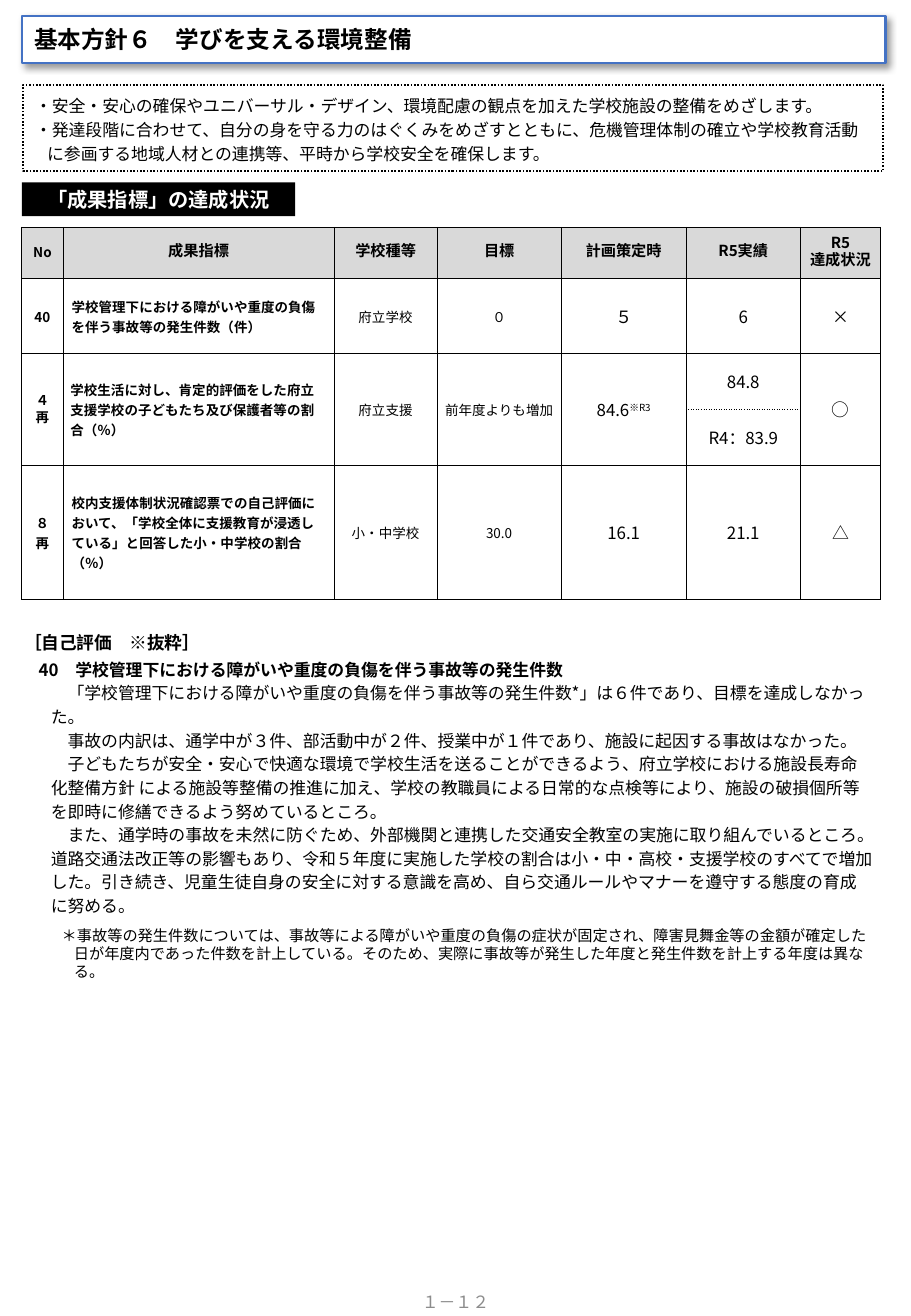
from dataclasses import dataclass

import lxml.etree
import pptx
import pptx.dml.color
import pptx.enum.shapes
import pptx.enum.text
import pptx.oxml.ns
import pptx.util
from pptx.util import Inches

SANS = "Noto Sans CJK JP"
SERIF = "TeX Gyre Schola"
BLACK, WHITE, BLUE, GRAY, PALE = "000000", "FFFFFF", "4472C4", "8C8C8C", "D9D9D9"
LEFT = pptx.enum.text.PP_ALIGN.LEFT
CENTER = pptx.enum.text.PP_ALIGN.CENTER
JUSTIFY = pptx.enum.text.PP_ALIGN.JUSTIFY
TOP = pptx.enum.text.MSO_ANCHOR.TOP
MIDDLE = pptx.enum.text.MSO_ANCHOR.MIDDLE


@dataclass
class Para:
    text: str
    size: float = 10
    bold: bool = False
    align: int = LEFT
    lead: float = 0
    left: float = 0
    hang: float = 0
    before: float = 0
    hue: str = BLACK
    face: str = SANS


@dataclass
class Row:
    """One printed row; leads are line pitches for number, text and value columns."""
    index: int
    leads: tuple[int, int, int]
    texts: list[str]
    span: int = 1


WIDTHS = [0.34, 2.23, 0.85, 1.02, 1.03, 0.94, 0.66]
HEIGHTS = [0.42, 0.62, 0.46, 0.46, 1.1]
RESULT = 5
ROWS = [
    Row(0, (10, 10, 10), ["No", "成果指標", "学校種等", "目標", "計画策定時", "R5実績", "R5\n達成状況"]),
    Row(1, (12, 12, 15), ["40", "学校管理下における障がいや重度の負傷を伴う事故等の発生件数（件）",
                          "府立学校", "０", "５", "6", "×"]),
    Row(2, (10, 12, 14), ["４\n再", "学校生活に対し、肯定的評価をした府立支援学校の子どもたち及び保護者等の割合（％）",
                          "府立支援", "前年度よりも増加", "84.6", "84.8", "○"], span=2),
    Row(4, (12, 12, 15), ["８\n再", "校内支援体制状況確認票での自己評価において、「学校全体に支援教育が浸透している」"
                          "と回答した小・中学校の割合（％）", "小・中学校", "30.0", "16.1", "21.1", "△"]),
]

AIMS = [
    Para("・安全・安心の確保やユニバーサル・デザイン、環境配慮の観点を加えた学校施設の整備をめざします。", lead=14),
    Para("・発達段階に合わせて、自分の身を守る力のはぐくみをめざすとともに、危機管理体制の確立や学校教育活動"
         "に参画する地域人材との連携等、平時から学校安全を確保します。", lead=14, left=0.1, hang=-0.1),
]
BODY = [
    "　「学校管理下における障がいや重度の負傷を伴う事故等の発生件数*」は６件であり、目標を達成しなかった。",
    "　事故の内訳は、通学中が３件、部活動中が２件、授業中が１件であり、施設に起因する事故はなかった。",
    "　子どもたちが安全・安心で快適な環境で学校生活を送ることができるよう、府立学校における施設長寿命化整備方針 "
    "による施設等整備の推進に加え、学校の教職員による日常的な点検等により、施設の破損個所等を即時に修繕できるよう"
    "努めているところ。",
    "　また、通学時の事故を未然に防ぐため、外部機関と連携した交通安全教室の実施に取り組んでいるところ。"
    "道路交通法改正等の影響もあり、令和５年度に実施した学校の割合は小・中・高校・支援学校のすべてで増加した。"
    "引き続き、児童生徒自身の安全に対する意識を高め、自ら交通ルールやマナーを遵守する態度の育成に努める。",
]
REVIEW = [
    Para("40　学校管理下における障がいや重度の負傷を伴う事故等の発生件数", bold=True, lead=14),
    *[Para(text, lead=14, left=0.1) for text in BODY],
    Para("＊事故等の発生件数については、事故等による障がいや重度の負傷の症状が固定され、障害見舞金等の金額が確定した"
         "日が年度内であった件数を計上している。そのため、実際に事故等が発生した年度と発生件数を計上する年度は異なる。",
         size=9, lead=10.8, left=0.29, hang=-0.1, before=6),
]


def color(code: str) -> pptx.dml.color.RGBColor:
    return pptx.dml.color.RGBColor.from_string(code)


def node(parent, tag: str, **attrs: str):
    """Append a DrawingML element."""
    return lxml.etree.SubElement(parent, pptx.oxml.ns.qn("a:" + tag), attrs)


def style_run(run, spec: Para) -> None:
    font = run.font
    font.size = pptx.util.Pt(spec.size)
    font.bold = spec.bold
    font.color.rgb = color(spec.hue)
    font.name = spec.face
    node(run._r.get_or_add_rPr(), "ea", typeface=spec.face)


def style_para(para, spec: Para) -> None:
    para.alignment = spec.align
    para.line_spacing = pptx.util.Pt(spec.lead) if spec.lead else 1.0
    para.space_before = pptx.util.Pt(spec.before)
    props = para._p.get_or_add_pPr()
    props.set("marL", str(Inches(spec.left)))
    props.set("indent", str(Inches(spec.hang)))
    for run in para.runs:
        style_run(run, spec)


def write(shape, specs: list[Para], anchor=MIDDLE, wrap: bool = True) -> None:
    frame = shape.text_frame
    frame.word_wrap = wrap
    frame.auto_size = pptx.enum.text.MSO_AUTO_SIZE.NONE
    frame.vertical_anchor = anchor
    frame.text = "\n".join(spec.text for spec in specs)
    for para, spec in zip(frame.paragraphs, specs):
        style_para(para, spec)


def place(shape, left: float, top: float, width: float, height: float) -> None:
    shape.left, shape.top = Inches(left), Inches(top)
    shape.width, shape.height = Inches(width), Inches(height)


def add_box(slide, area: tuple[float, ...]):
    """Add a rectangle with no shadow, fill or line."""
    kind = pptx.enum.shapes.MSO_SHAPE.RECTANGLE
    shape = slide.shapes.add_shape(kind, *map(Inches, area))
    shape.shadow.inherit = False
    shape.fill.background()
    shape.line.fill.background()
    return shape


def add_text(slide, area: tuple[float, ...], specs: list[Para], anchor=TOP) -> None:
    write(slide.shapes.add_textbox(*map(Inches, area)), specs, anchor)


def add_title(slide) -> None:
    title = slide.shapes.title
    place(title, 0.18, 0.13, 7.11, 0.39)
    title.fill.solid()
    title.fill.fore_color.rgb = color(WHITE)
    title.line.color.rgb = color(BLUE)
    title.line.width = pptx.util.Pt(1.5)
    title.shadow.inherit = False
    effects = title._element.spPr.find(pptx.oxml.ns.qn("a:effectLst"))
    shade = node(effects, "outerShdw", blurRad=str(pptx.util.Pt(4)),
                 dist=str(pptx.util.Pt(3)), dir="2700000", algn="tl", rotWithShape="0")
    node(node(shade, "srgbClr", val=BLACK), "alpha", val="40000")
    write(title, [Para("基本方針６　学びを支える環境整備", size=14, bold=True)])


def add_edges(cell, dotted: str) -> None:
    """Rule all four sides, with one side dotted if named."""
    props = cell._tc.get_or_add_tcPr()
    for side in "LRTB":
        line = node(props, "ln" + side, w=str(pptx.util.Pt(0.5)))
        node(node(line, "solidFill"), "srgbClr", val=BLACK)
        node(line, "prstDash", val="sysDot" if side == dotted else "solid")


def fill_cell(cell, text: str, spec: Para, inset: float) -> None:
    cell.text_frame.text = text
    cell.vertical_anchor = MIDDLE
    cell.margin_left = cell.margin_right = Inches(inset)
    cell.margin_top = cell.margin_bottom = 0
    for para in cell.text_frame.paragraphs:
        style_para(para, spec)


def add_grid(slide) -> None:
    area = (0.18, 1.87, sum(WIDTHS), sum(HEIGHTS))
    grid = slide.shapes.add_table(len(HEIGHTS), len(WIDTHS), *map(Inches, area)).table
    grid.first_row = grid.horz_banding = False
    for col, width in zip(grid.columns, WIDTHS):
        col.width = Inches(width)
    for r, height in enumerate(HEIGHTS):
        grid.rows[r].height = Inches(height)
        for c in range(len(WIDTHS)):
            cell = grid.cell(r, c)
            add_edges(cell, {(2, RESULT): "B", (3, RESULT): "T"}.get((r, c), ""))
            if r == 0:
                cell.fill.solid()
                cell.fill.fore_color.rgb = color(PALE)
            else:
                cell.fill.background()
    for row in ROWS:
        head = row.index == 0
        for c, text in enumerate(row.texts):
            cell = grid.cell(row.index, c)
            if row.span > 1 and c != RESULT:
                cell.merge(grid.cell(row.index + row.span - 1, c))
            size = 10.5 if text == "○" else 10 if c > 3 else 8
            spec = Para(text, 9 if head and c else 8 if head else size, head or c < 2,
                        LEFT if c == 1 and not head else CENTER,
                        row.leads[0 if c == 0 else 1 if c < 4 else 2])
            fill_cell(cell, text, spec, 0.06 if head or row.span > 1 and c < 4 else 0.07)
    value = Para("R4：83.9", align=CENTER, lead=14)
    fill_cell(grid.cell(3, RESULT), value.text, value, 0.07)
    note = grid.cell(2, 4).text_frame.paragraphs[0].add_run()
    note.text = "※R3"
    style_run(note, value)
    note._r.get_or_add_rPr().set("baseline", "30000")


def main() -> None:
    deck = pptx.Presentation()
    deck.slide_width, deck.slide_height = Inches(7.5), Inches(10.83)
    slide = deck.slides.add_slide(deck.slide_layouts[5])
    add_title(slide)
    add_grid(slide)
    label = add_box(slide, (0.18, 1.5, 2.25, 0.28))
    label.fill.solid()
    label.fill.fore_color.rgb = color(BLACK)
    write(label, [Para("「成果指標」の達成状況", 12, True, CENTER, hue=WHITE)], wrap=False)
    frame = add_box(slide, (0.19, 0.7, 7.08, 0.71))
    frame.line.color.rgb = color(BLACK)
    frame.line.width = pptx.util.Pt(1)
    frame.line.dash_style = pptx.enum.dml.MSO_LINE.ROUND_DOT
    write(frame, AIMS)
    add_text(slide, (0.1, 5.05, 3.93, 0.36), [Para("［自己評価　※抜粋］", 10.5, True, JUSTIFY, 20)])
    add_text(slide, (0.22, 5.35, 7.06, 2.26), REVIEW)
    add_text(slide, (0.01, 10.58, 7.48, 0.26),
             [Para("１－１２", align=CENTER, hue=GRAY, face=SERIF)], MIDDLE)
    deck.save("out.pptx")


if __name__ == "__main__":
    main()
